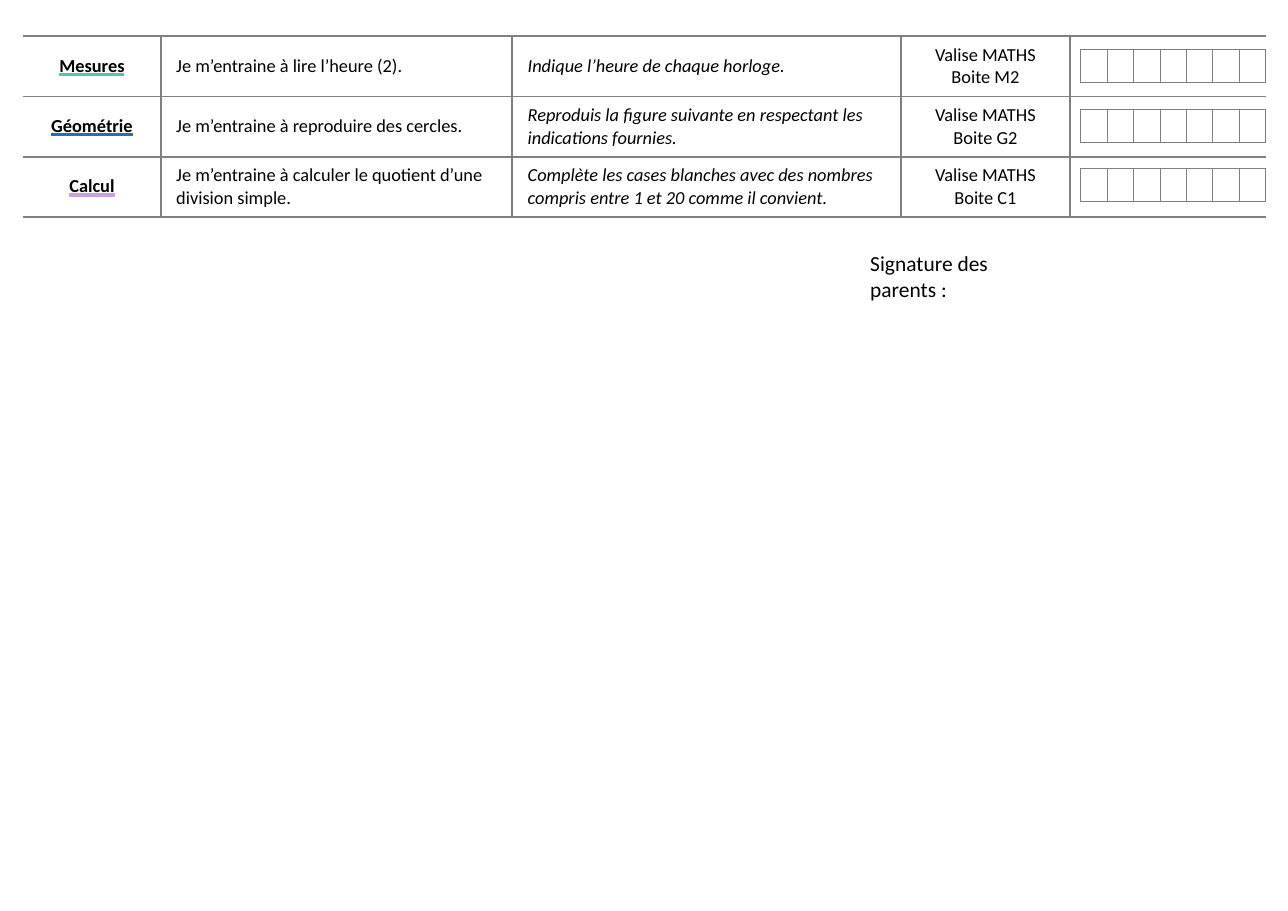
from dataclasses import dataclass

from lxml import etree
from pptx import Presentation
from pptx.dml.color import RGBColor
from pptx.enum.text import MSO_ANCHOR, MSO_UNDERLINE, PP_ALIGN
from pptx.oxml.ns import qn
from pptx.util import Inches, Pt

CENTER, LEFT = PP_ALIGN.CENTER, PP_ALIGN.LEFT
MIDDLE = MSO_ANCHOR.MIDDLE
HEAVY = MSO_UNDERLINE.HEAVY_LINE


@dataclass(frozen=True)
class Theme:
    font: str = "Calibri"
    ink: str = "000000"
    paper: str = "FFFFFF"
    rule: str = "808080"
    grid: str = "7F7F7F"
    body: int = 12
    signature: int = 14
    empty: int = 8
    rule_width: float = 1.5
    grid_width: float = 0.75


THEME = Theme()

COLUMN_WIDTHS = (1.25, 3.19, 3.53, 1.53, 1.78)
ROW_HEIGHT = 0.54
GRID_COLUMNS = 7
GRID_SIZE = (1.68, 0.3)
GRID_OFFSET = (0.1, 0.12)

# subject, underline colour, goal, instruction, box label
EXERCISES = (
    ("Mesures", "5BC0B0", "Je m’entraine à lire l’heure (2).",
     "Indique l’heure de chaque horloge.", "Boite M2"),
    ("Géométrie", "1F70C1", "Je m’entraine à reproduire des cercles.",
     "Reproduis la figure suivante en respectant les indications fournies.",
     "Boite G2"),
    ("Calcul", "C9A0E0",
     "Je m’entraine à calculer le quotient d’une division simple.",
     "Complète les cases blanches avec des nombres compris entre 1 et 20 "
     "comme il convient.", "Boite C1"),
)


def add_span(para, text, size, bold=False, italic=False, underline=None):
    span = para.add_run()
    span.text = text
    font = span.font
    font.size, font.bold, font.italic = Pt(size), bold, italic
    font.color.rgb = RGBColor.from_string(THEME.ink)
    if underline:
        font.underline = HEAVY
        underline_fill = etree.SubElement(span._r.get_or_add_rPr(), qn("a:uFill"))
        solid = etree.SubElement(underline_fill, qn("a:solidFill"))
        etree.SubElement(solid, qn("a:srgbClr"), val=underline)
    font.name = THEME.font


def style_cell(cell, color, width, hidden=()):
    """Draw the cell's borders, except the hidden sides, and its white fill."""
    properties = cell._tc.get_or_add_tcPr()
    for side in "LRTB":
        line = etree.SubElement(properties, qn(f"a:ln{side}"), w=str(Pt(width)))
        if side in hidden:
            etree.SubElement(line, qn("a:noFill"))
        else:
            solid = etree.SubElement(line, qn("a:solidFill"))
            etree.SubElement(solid, qn("a:srgbClr"), val=color)
    cell.fill.solid()
    cell.fill.fore_color.rgb = RGBColor.from_string(THEME.paper)
    cell.vertical_anchor = MIDDLE
    cell.margin_left = cell.margin_right = Inches(0.14)
    cell.margin_top = cell.margin_bottom = Inches(0.07)


def leave_empty(cell):
    """Keep an empty cell from stretching its row."""
    cell.margin_left = cell.margin_right = Inches(0.02)
    cell.margin_top = cell.margin_bottom = Inches(0.02)
    para = cell.text_frame.paragraphs[0]
    etree.SubElement(para._p, qn("a:endParaRPr"), sz=str(THEME.empty * 100))


def add_plain_table(page, rows, columns, left, top, width, height):
    table = page.shapes.add_table(
        rows, columns, Inches(left), Inches(top), Inches(width), Inches(height)
    ).table
    table.first_row = table.horz_banding = False
    return table


def add_tick_grid(page, left, top, width, height):
    table = add_plain_table(page, 1, GRID_COLUMNS, left, top, width, height)
    for cell in table.iter_cells():
        style_cell(cell, THEME.grid, THEME.grid_width)
        leave_empty(cell)


def fill_exercise(cells, exercise):
    subject, underline, goal, instruction, box_label = exercise
    contents = (
        (CENTER, (subject,), {"bold": True, "underline": underline}),
        (LEFT, (goal,), {}),
        (LEFT, (instruction,), {"italic": True}),
        (CENTER, ("Valise MATHS", box_label), {}),
    )
    for cell, (align, lines, look) in zip(cells, contents):
        frame = cell.text_frame
        for index, line in enumerate(lines):
            para = frame.add_paragraph() if index else frame.paragraphs[0]
            para.alignment = align
            add_span(para, line, THEME.body, **look)
    leave_empty(cells[-1])


def add_work_plan(page, left, top):
    width, height = sum(COLUMN_WIDTHS), ROW_HEIGHT * len(EXERCISES)
    last = len(COLUMN_WIDTHS) - 1
    table = add_plain_table(
        page, len(EXERCISES), len(COLUMN_WIDTHS), left, top, width, height)
    for column, column_width in zip(table.columns, COLUMN_WIDTHS):
        column.width = Inches(column_width)
    for row, exercise in zip(table.rows, EXERCISES):
        cells = list(row.cells)
        for index, cell in enumerate(cells):
            hidden = {0: "L", last: "R"}.get(index, "")
            style_cell(cell, THEME.rule, THEME.rule_width, hidden)
        fill_exercise(cells, exercise)

    grid_left = left + sum(COLUMN_WIDTHS[:-1]) + GRID_OFFSET[0]
    for index in range(len(EXERCISES)):
        grid_top = top + index * ROW_HEIGHT + GRID_OFFSET[1]
        add_tick_grid(page, grid_left, grid_top, *GRID_SIZE)


def add_signature(page, left, top, width, height):
    box = page.shapes.add_textbox(
        Inches(left), Inches(top), Inches(width), Inches(height))
    box.text_frame.word_wrap = True
    add_span(box.text_frame.paragraphs[0], "Signature des parents :",
             THEME.signature)


def main():
    deck = Presentation()
    deck.slide_width, deck.slide_height = Inches(11.69), Inches(8.27)
    page = deck.slides.add_slide(deck.slide_layouts[6])
    add_work_plan(page, 0.21, 0.33)
    add_signature(page, 7.8, 2.22, 1.9, 0.34)
    deck.save("out.pptx")


if __name__ == "__main__":
    main()
